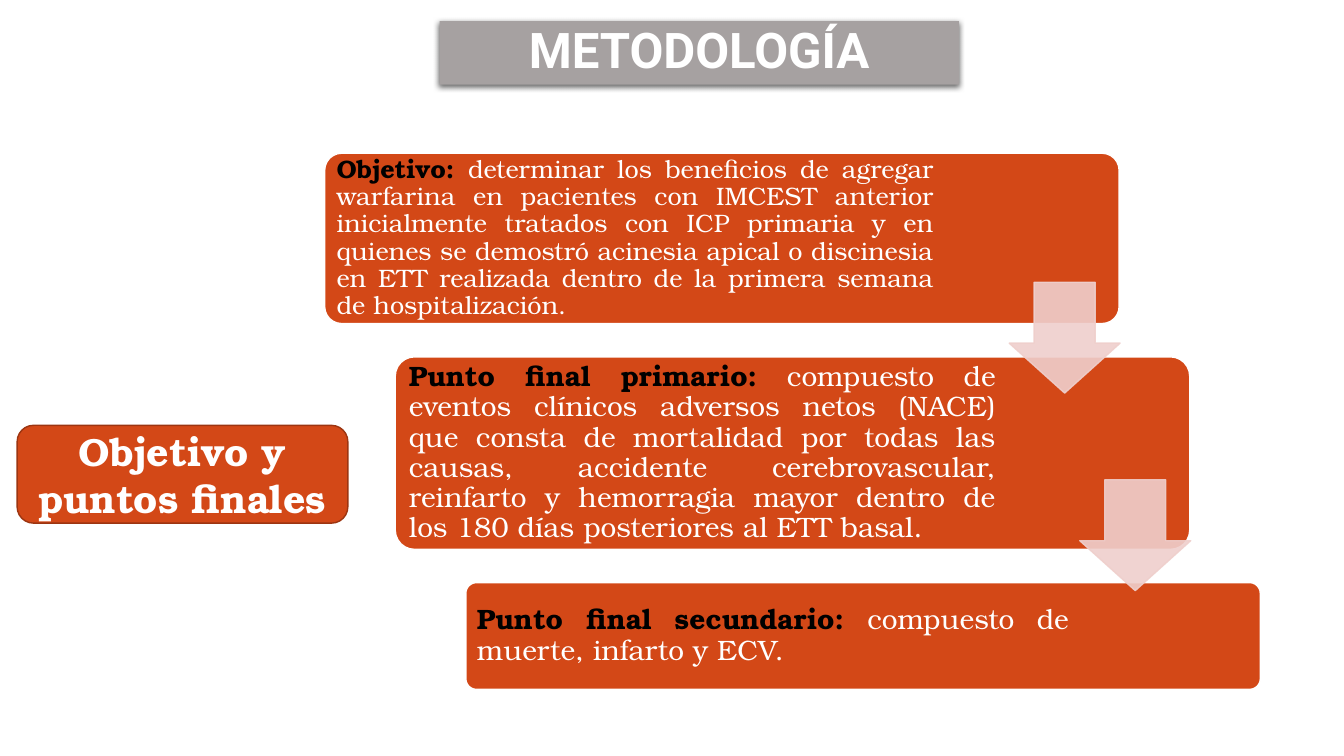
from dataclasses import dataclass

from lxml import etree
from pptx import Presentation
from pptx.dml.color import RGBColor
from pptx.enum.shapes import MSO_SHAPE as Shape
from pptx.enum.text import MSO_ANCHOR as Anchor, PP_ALIGN as Align
from pptx.oxml.ns import qn
from pptx.util import Inches, Pt

TITLE = "METODOLOGÍA"
TOPIC = "Objetivo y puntos finales"
# heading, explanation, type size, card height, text width, text margin
STEPS = [
    ("Objetivo: ",
     "determinar los beneficios de agregar warfarina en pacientes con IMCEST "
     "anterior inicialmente tratados con ICP primaria y en quienes se demostró "
     "acinesia apical o discinesia en ETT realizada dentro de la primera semana "
     "de hospitalización.", 18, 1.69, 6.06, 0.07),
    ("Punto final primario:",
     " compuesto de eventos clínicos adversos netos (NACE) que consta de "
     "mortalidad por todas las causas, accidente cerebrovascular, reinfarto y "
     "hemorragia mayor dentro de los 180 días posteriores al ETT basal.",
     20, 1.91, 5.98, 0.08),
    ("Punto final secundario: ",
     "compuesto de muerte, infarto y ECV.", 20, 1.06, 6.03, 0.08),
]


@dataclass(frozen=True)
class Theme:
    orange: str = "D34817"
    rust: str = "9C3511"
    pink: str = "EFCFCC"
    gray: str = "A6A1A1"
    white: str = "FFFFFF"
    black: str = "000000"
    heading_font: str = "Roboto"
    body_font: str = "TeX Gyre Bonum"
    title_size: float = 35.1
    topic_size: float = 28


THEME = Theme()
SLIDE_W, SLIDE_H = 13.33, 7.5
CARD_LEFT, CARD_TOP, CARD_W = 3.22, 1.52, 7.88
INDENT, CARD_GAP = 0.7, 0.33
CORNER = 0.1
CORNER_INSET = CORNER * 0.29  # share of the height kept clear of the round corner
ARROW_SIZE, ARROW_TOP, ARROW_STEP = 1.1, 2.8, 1.96

deck = Presentation()
deck.slide_width, deck.slide_height = Inches(SLIDE_W), Inches(SLIDE_H)
slide = deck.slides.add_slide(deck.slide_layouts[6])


def add_box(kind, box, fill, line=None, adjustments=()):
    shape = slide.shapes.add_shape(kind, *map(Inches, box))
    shape.shadow.inherit = False
    for index, value in enumerate(adjustments):
        shape.adjustments[index] = value
    shape.fill.solid()
    shape.fill.fore_color.rgb = RGBColor.from_string(fill)
    if line:
        shape.line.color.rgb = RGBColor.from_string(line)
        shape.line.width = Pt(1)
    else:
        shape.line.fill.background()
    return shape


def set_alpha(color, percent):
    etree.SubElement(color, qn("a:alpha"), val=str(percent * 1000))


def write(shape, runs, size, font, align, spacing=1.0):
    """Fill a shape with one paragraph of (text, colour, bold) runs."""
    frame = shape.text_frame
    frame.word_wrap = True
    frame.vertical_anchor = Anchor.MIDDLE
    paragraph = frame.paragraphs[0]
    paragraph.alignment = align
    paragraph.line_spacing = spacing
    for text, color, bold in runs:
        run = paragraph.add_run()
        run.text = text
        run.font.size, run.font.name, run.font.bold = Pt(size), font, bold
        run.font.color.rgb = RGBColor.from_string(color)


def add_drop_shadow(shape):
    effects = shape._element.spPr.find(qn("a:effectLst"))
    shadow = etree.SubElement(
        effects, qn("a:outerShdw"), blurRad=str(Pt(4)), dist=str(Pt(1.5)),
        dir=str(90 * 60000), algn="ctr", rotWithShape="0")
    set_alpha(etree.SubElement(shadow, qn("a:srgbClr"), val=THEME.black), 60)


def add_card(left, top, step):
    heading, explanation, size, height, text_w, margin = step
    add_box(Shape.ROUNDED_RECTANGLE, (left, top, CARD_W, height),
            THEME.orange, THEME.white, [CORNER])
    inset = height * CORNER_INSET
    text_box = slide.shapes.add_textbox(*map(Inches, (
        left + inset, top + inset, text_w, height - 2 * inset)))
    frame = text_box.text_frame
    frame.margin_left = frame.margin_right = Inches(margin)
    frame.margin_top = frame.margin_bottom = Inches(margin)
    write(text_box, [(heading, THEME.black, True), (explanation, THEME.white, False)],
          size, THEME.body_font, Align.JUSTIFY, 0.9)


def add_arrow(index):
    left = CARD_LEFT + CARD_W + index * INDENT - ARROW_SIZE + 0.01
    arrow = add_box(
        Shape.DOWN_ARROW,
        (left, ARROW_TOP + index * ARROW_STEP, ARROW_SIZE, ARROW_SIZE),
        THEME.pink, THEME.pink)
    arrow.adjustments[0], arrow.adjustments[1] = 0.55, 0.45
    for color in arrow._element.spPr.iter(qn("a:srgbClr")):
        set_alpha(color, 90)


topic = add_box(Shape.FLOWCHART_ALTERNATE_PROCESS, (0.17, 4.22, 3.28, 0.97),
                THEME.orange, THEME.rust)
write(topic, [(TOPIC, THEME.white, True)], THEME.topic_size,
      THEME.body_font, Align.CENTER)

card_top = CARD_TOP
for position, step in enumerate(STEPS):
    add_card(CARD_LEFT + position * INDENT, card_top, step)
    card_top += step[3] + CARD_GAP
for position in range(len(STEPS) - 1):
    add_arrow(position)

banner = add_box(Shape.RECTANGLE, (4.36, 0.21, 5.15, 0.63), THEME.gray)
add_drop_shadow(banner)
write(banner, [(TITLE, THEME.white, True)], THEME.title_size,
      THEME.heading_font, Align.CENTER, 0.9)

deck.save("out.pptx")
